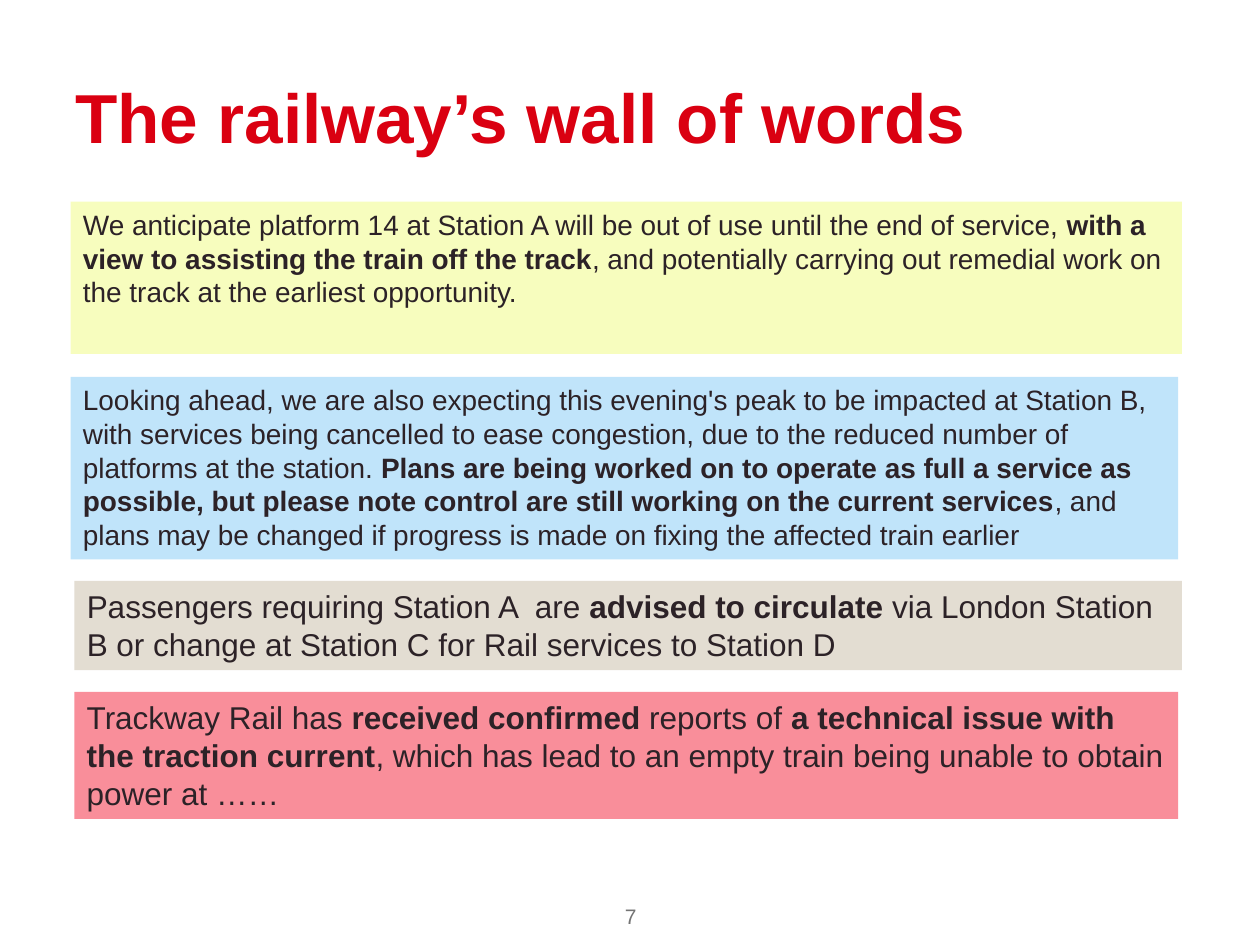
from pptx import Presentation
from pptx.dml.color import RGBColor
from pptx.enum.shapes import MSO_SHAPE
from pptx.enum.text import MSO_ANCHOR, PP_ALIGN
from pptx.util import Inches, Pt

FONT = "Arial"
COLORS = {
    "title": "DA0011",
    "body": "2C2227",
    "number": "747474",
    "yellow": "F7FDBE",
    "blue": "C0E4FA",
    "beige": "E3DDD2",
    "pink": "F98E9A",
}

# Each message: box, fill, text size, runs as (text, bold)
MESSAGES = [
    ((0.56, 1.6, 8.82, 1.21), "yellow", 16, [
        ("We anticipate platform 14 at Station A will be out of use until "
         "the end of service, ", False),
        ("with a view to assisting the train off the track", True),
        (", and potentially carrying out remedial work on the track at the "
         "earliest opportunity.", False),
    ]),
    ((0.56, 2.99, 8.79, 1.45), "blue", 16, [
        ("Looking ahead, we are also expecting this evening's peak to be "
         "impacted at Station B, with services being cancelled to ease "
         "congestion, due to the reduced number of platforms at the "
         "station. ", False),
        ("Plans are being worked on to operate as full a service as possible, "
         "but please note control are still working on the current services",
         True),
        (", and plans may be changed if progress is made on fixing the "
         "affected train earlier", False),
    ]),
    ((0.59, 4.61, 8.79, 0.71), "beige", 18, [
        ("Passengers requiring Station A  are ", False),
        ("advised to circulate ", True),
        ("via London Station B or change at Station C for Rail services to "
         "Station D", False),
    ]),
    ((0.59, 5.49, 8.76, 1.01), "pink", 18, [
        ("Trackway Rail has ", False),
        ("received confirmed ", True),
        ("reports of ", False),
        ("a technical issue with the traction current", True),
        (", which has lead to an empty train being unable to obtain power "
         "at ……", False),
    ]),
]


def rgb(name):
    return RGBColor.from_string(COLORS[name])


def write_runs(sp, runs, size, color, align=PP_ALIGN.LEFT,
               anchor=MSO_ANCHOR.TOP):
    tf = sp.text_frame
    tf.word_wrap = True
    tf.vertical_anchor = anchor
    p = tf.paragraphs[0]
    p.alignment = align
    for text, bold in runs:
        r = p.add_run()
        r.text = text
        r.font.name = FONT
        r.font.size = Pt(size)
        r.font.bold = bold
        r.font.color.rgb = rgb(color)
    return tf


def add_label(s, box, runs, size, color, **layout):
    sp = s.shapes.add_textbox(*map(Inches, box))
    return write_runs(sp, runs, size, color, **layout)


def add_message(s, box, fill, size, runs):
    sp = s.shapes.add_shape(MSO_SHAPE.RECTANGLE, *map(Inches, box))
    sp.shadow.inherit = False
    sp.fill.solid()
    sp.fill.fore_color.rgb = rgb(fill)
    sp.line.fill.background()
    write_runs(sp, runs, size, "body")


def main():
    prs = Presentation()
    prs.slide_width, prs.slide_height = Inches(10), Inches(7.5)
    s = prs.slides.add_slide(prs.slide_layouts[6])

    # Title
    tf = add_label(s, (0.5, 0.53, 9, 0.74),
                   [("The railway’s wall of words", True)], 39.6, "title",
                   anchor=MSO_ANCHOR.BOTTOM)
    tf.margin_bottom = Inches(0.02)

    # Page number
    add_label(s, (3.42, 7.1, 3.17, 0.34), [("7", False)], 12, "number",
              align=PP_ALIGN.CENTER, anchor=MSO_ANCHOR.MIDDLE)

    # Message boxes
    for message in MESSAGES:
        add_message(s, *message)

    prs.save("out.pptx")


if __name__ == "__main__":
    main()
